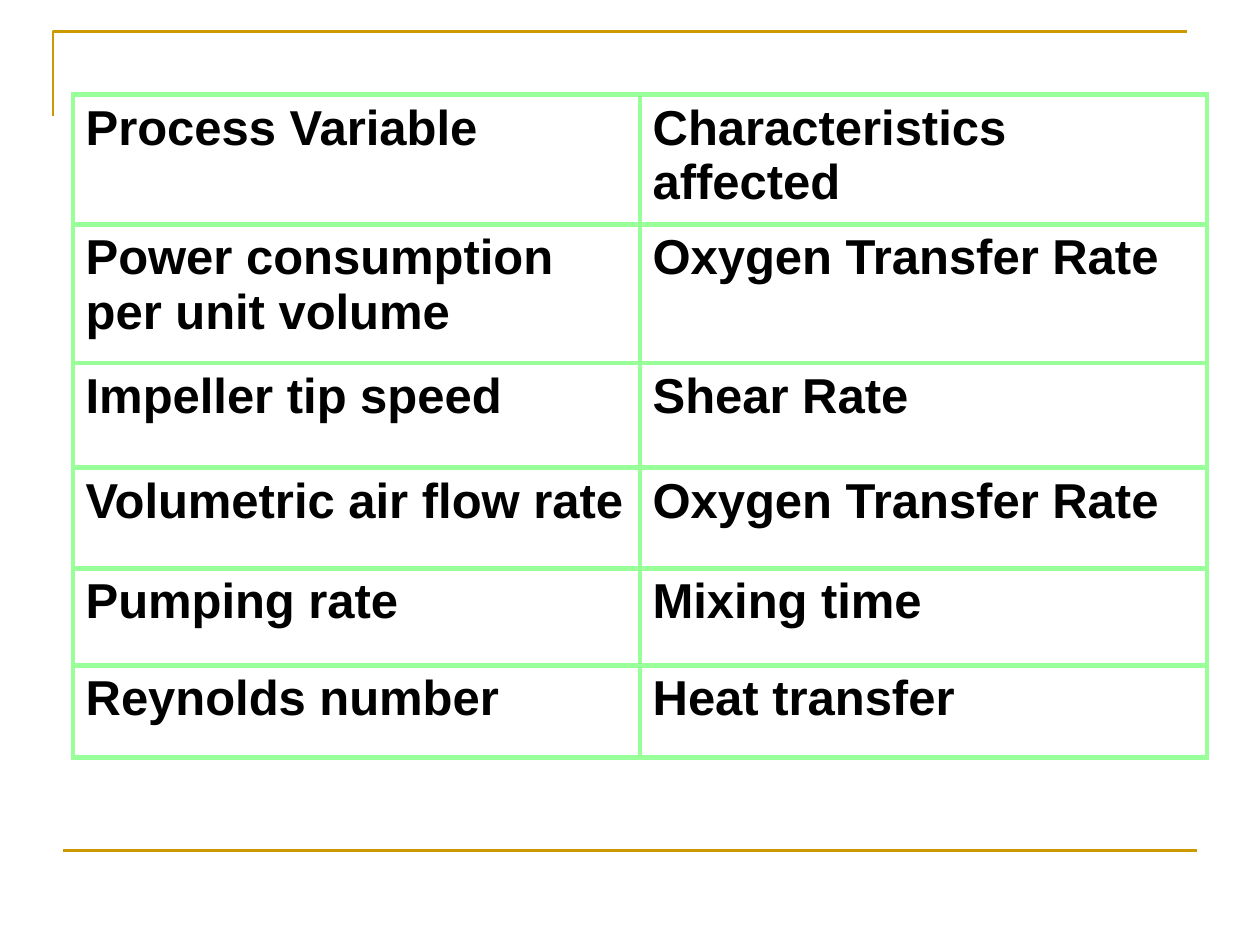
"""Build a slide with a table of process variables and the characteristics they affect."""
from lxml import etree
from pptx import Presentation
from pptx import util as u
from pptx.dml.color import RGBColor
from pptx.enum import shapes
from pptx.oxml.ns import qn

GOLD = RGBColor(0xCC, 0x99, 0x00)
GREEN = RGBColor(0x99, 0xFF, 0x99)
BLACK = RGBColor(0, 0, 0)

ROWS = [
    ("Process Variable", "Characteristics affected", 1.03),
    ("Power consumption per unit volume", "Oxygen Transfer Rate", 1.1),
    ("Impeller tip speed", "Shear Rate", 0.83),
    ("Volumetric air flow rate", "Oxygen Transfer Rate", 0.8),
    ("Pumping rate", "Mixing time", 0.77),
    ("Reynolds number", "Heat transfer", 0.73),
]
WIDTH, HEIGHT = 10, 7.5
SPAN = 0.9 * WIDTH
TABLE_LEFT, TABLE_TOP = 0.58, 0.75
CORNER_LEFT, CORNER_TOP, CORNER_DROP = 0.42, 0.25, 0.67
RULE_LEFT, RULE_TOP = 0.05 * WIDTH, 0.9 * HEIGHT


def style_line(shape):
    shape.line.color.rgb = GOLD
    shape.line.width = u.Pt(1.5)


def add_frame(slide):
    top, left = u.Inches(CORNER_TOP), u.Inches(CORNER_LEFT)
    builder = slide.shapes.build_freeform(left, u.Inches(CORNER_TOP + CORNER_DROP))
    builder.add_line_segments([(left, top), (u.Inches(CORNER_LEFT + SPAN), top)], close=False)
    corner = builder.convert_to_shape()
    corner.shadow.inherit = False
    corner.fill.background()
    style_line(corner)

    rule = slide.shapes.add_connector(
        shapes.MSO_CONNECTOR.STRAIGHT,
        *map(u.Inches, (RULE_LEFT, RULE_TOP, RULE_LEFT + SPAN, RULE_TOP)))
    style_line(rule)
    etree.SubElement(rule._element.spPr, qn("a:effectLst"))


def add_borders(cell):
    properties = cell._tc.get_or_add_tcPr()
    for side in ("lnL", "lnR", "lnT", "lnB"):
        border = etree.SubElement(properties, qn(f"a:{side}"), w=str(u.Pt(3)))
        fill = etree.SubElement(border, qn("a:solidFill"))
        etree.SubElement(fill, qn("a:srgbClr"), val=str(GREEN))


def fill_cell(cell, words):
    add_borders(cell)
    cell.fill.background()
    cell.margin_left = cell.margin_right = u.Inches(0.1)
    cell.margin_top = cell.margin_bottom = u.Inches(0.05)
    paragraph = cell.text_frame.paragraphs[0]
    spacing = etree.SubElement(paragraph._p.get_or_add_pPr(), qn("a:spcBef"))
    etree.SubElement(spacing, qn("a:spcPct"), val="20000")
    run = paragraph.add_run()
    run.text = words
    run.font.name = "Arial"
    run.font.size = u.Pt(28)
    run.font.bold = True
    run.font.color.rgb = BLACK


def add_variables(slide):
    total = sum(height for *_, height in ROWS)
    table = slide.shapes.add_table(
        len(ROWS), 2, *map(u.Inches, (TABLE_LEFT, TABLE_TOP, SPAN, total))).table
    table.first_row = table.horz_banding = False
    for row, (*texts, height) in zip(table.rows, ROWS):
        row.height = u.Inches(height)
        for cell, words in zip(row.cells, texts):
            fill_cell(cell, words)


def main():
    presentation = Presentation()
    presentation.slide_width = u.Inches(WIDTH)
    presentation.slide_height = u.Inches(HEIGHT)
    slide = presentation.slides.add_slide(presentation.slide_layouts[6])
    add_frame(slide)
    add_variables(slide)
    presentation.save("out.pptx")


if __name__ == "__main__":
    main()
